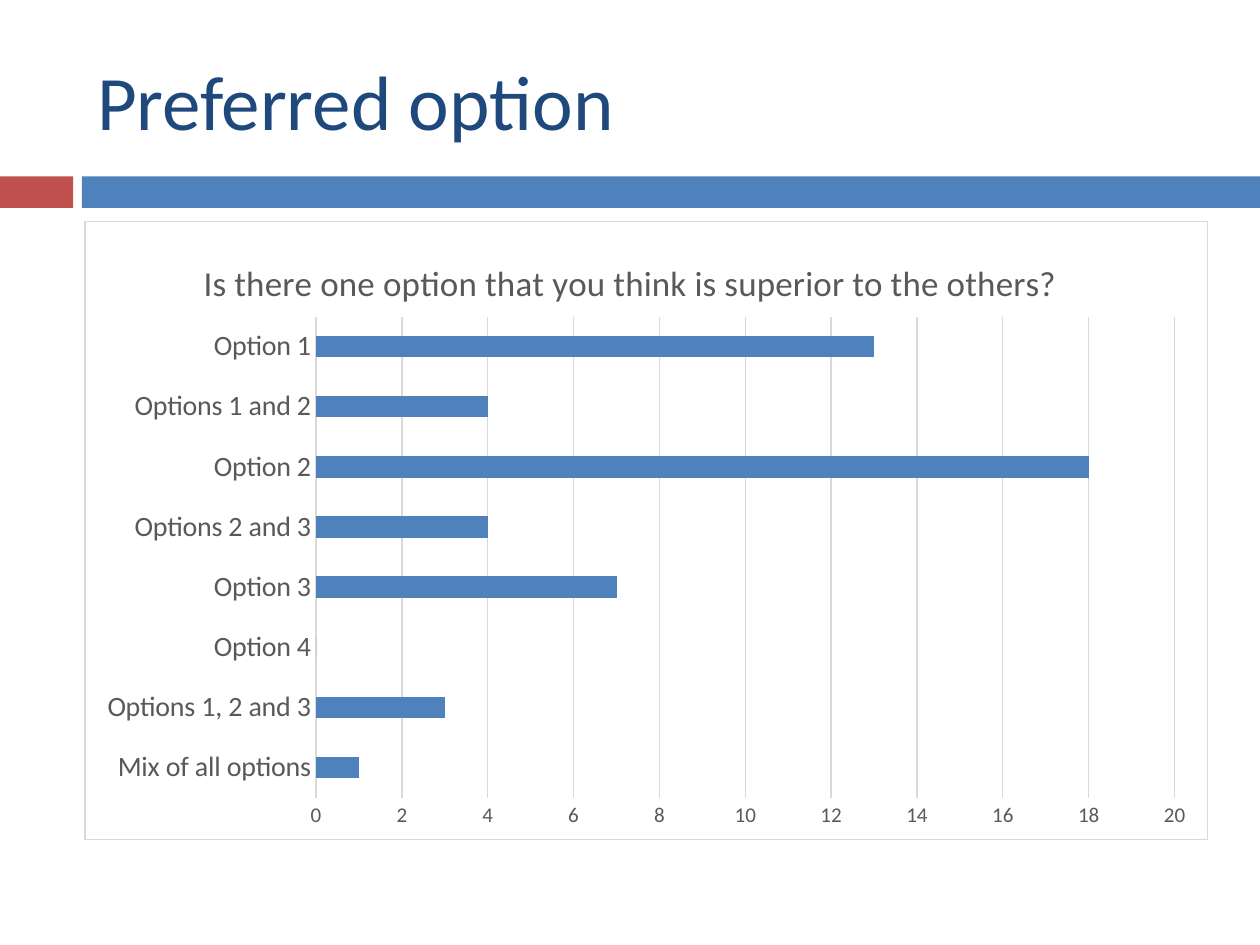
from dataclasses import dataclass

from lxml.etree import fromstring
from pptx import Presentation
from pptx.chart.data import CategoryChartData as Data
from pptx.dml.color import RGBColor as Rgb
from pptx.enum.chart import XL_CHART_TYPE as Kind, XL_TICK_MARK as Tick
from pptx.enum.shapes import MSO_SHAPE as Shape
from pptx.enum.text import MSO_ANCHOR as Anchor, PP_ALIGN as Align
from pptx.util import Inches, Pt

C_NS = "http://schemas.openxmlformats.org/drawingml/2006/chart"
A_NS = "http://schemas.openxmlformats.org/drawingml/2006/main"
WIDE, HIGH = 10, 7.5
LEFT, SPAN = 0.67, 8.92
VOTES = {
    "Mix of all options": 1,
    "Options 1, 2 and 3": 3,
    "Option 4": 0,
    "Option 3": 7,
    "Options 2 and 3": 4,
    "Option 2": 18,
    "Options 1 and 2": 4,
    "Option 1": 13,
}


@dataclass(frozen=True)
class Theme:
    """Colours and type sizes of the slide."""
    face: str = "Calibri"
    navy: str = "1F497D"
    blue: str = "4F81BD"
    red: str = "C0504D"
    grey: str = "595959"
    rule: str = "D9D9D9"
    paper: str = "FFFFFF"
    head: int = 44
    ask: int = 20
    label: int = 16
    tick: int = 12
    hair: float = 0.75


THEME = Theme()


def box(left, top, width, height):
    """Return a frame in slide units."""
    return [Inches(n) for n in (left, top, width, height)]


def style(font, size, color):
    """Set face, size and colour of a font."""
    font.name, font.size, font.bold = THEME.face, Pt(size), False
    font.color.rgb = Rgb.from_string(color)


def rule(line):
    """Make a line a thin pale rule."""
    line.color.rgb = Rgb.from_string(THEME.rule)
    line.width = Pt(THEME.hair)


def add_band(slide, left, width, color):
    """Draw one part of the band under the title."""
    band = slide.shapes.add_shape(Shape.RECTANGLE, *box(left, 1.4, width, 0.25))
    band.shadow.inherit = False
    band.fill.solid()
    band.fill.fore_color.rgb = Rgb.from_string(color)
    band.line.fill.background()


def set_title(slide, text):
    """Fill and place the title."""
    title = slide.shapes.title
    title.left, title.top, title.width, title.height = box(LEFT, 0.25, SPAN, 1.08)
    frame = title.text_frame
    frame.text = text
    frame.vertical_anchor = Anchor.MIDDLE
    para = frame.paragraphs[0]
    para.alignment = Align.LEFT
    style(para.font, THEME.head, THEME.navy)


def frame_chart(chart):
    """Give the chart area a fill and a border."""
    area = fromstring(
        f'<c:spPr xmlns:c="{C_NS}" xmlns:a="{A_NS}">'
        f'<a:solidFill><a:srgbClr val="{THEME.paper}"/></a:solidFill>'
        f'<a:ln w="{Pt(THEME.hair)}"><a:solidFill>'
        f'<a:srgbClr val="{THEME.rule}"/></a:solidFill></a:ln></c:spPr>')
    chart.element.find(f"{{{C_NS}}}chart").addnext(area)


def head_chart(chart, text, left, top):
    """Add the chart title at shares of the chart's size."""
    chart.has_title = True
    frame = chart.chart_title.text_frame
    frame.text = text
    style(frame.paragraphs[0].font, THEME.ask, THEME.grey)
    node = chart.element.find(f".//{{{C_NS}}}title/{{{C_NS}}}layout")
    node.append(fromstring(
        f'<c:manualLayout xmlns:c="{C_NS}"><c:xMode val="edge"/>'
        f'<c:yMode val="edge"/><c:x val="{left}"/><c:y val="{top}"/>'
        '</c:manualLayout>'))


def set_axes(chart):
    """Format both axes and the grid."""
    sizes = (THEME.label, THEME.tick)
    for axis, size in zip((chart.category_axis, chart.value_axis), sizes):
        axis.major_tick_mark = axis.minor_tick_mark = Tick.NONE
        style(axis.tick_labels.font, size, THEME.grey)
    rule(chart.category_axis.format.line)
    scale = chart.value_axis
    scale.minimum_scale, scale.maximum_scale, scale.major_unit = 0, 20, 2
    scale.format.line.fill.background()
    rule(scale.major_gridlines.format.line)


def add_bars(slide, votes):
    """Add the bar chart of votes."""
    data = Data()
    data.categories = list(votes)
    data.add_series("Series 1", list(votes.values()))
    chart = slide.shapes.add_chart(
        Kind.BAR_CLUSTERED, *box(LEFT, 1.75, SPAN, 4.92), data).chart
    chart.has_legend = False
    style(chart.font, 10, "000000")
    frame_chart(chart)
    head_chart(chart, "Is there one option that you think is superior to the others?",
               0.1, 0.05)
    set_axes(chart)
    plot = chart.plots[0]
    plot.gap_width, plot.vary_by_categories = 182, False
    fill = plot.series[0].format.fill
    fill.solid()
    fill.fore_color.rgb = Rgb.from_string(THEME.blue)


def main():
    """Build and save the slide."""
    deck = Presentation()
    deck.slide_width, deck.slide_height = Inches(WIDE), Inches(HIGH)
    slide = deck.slides.add_slide(deck.slide_layouts.get_by_name("Title Only"))
    add_band(slide, 0, 0.58, THEME.red)
    add_band(slide, 0.65, WIDE - 0.65, THEME.blue)
    set_title(slide, "Preferred option")
    add_bars(slide, VOTES)
    deck.save("out.pptx")


if __name__ == "__main__":
    main()
